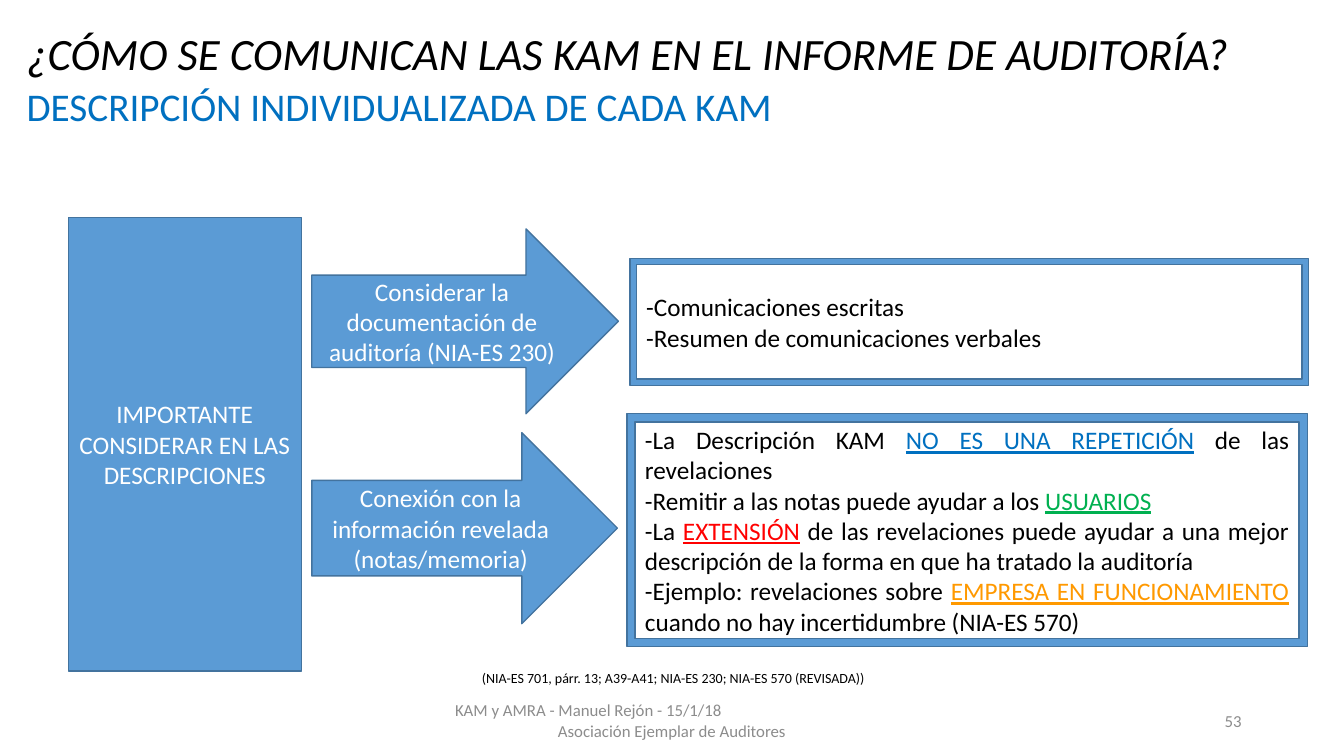
from pptx import Presentation
from pptx.dml.color import RGBColor
from pptx.enum.shapes import MSO_SHAPE
from pptx.enum.text import MSO_ANCHOR, MSO_AUTO_SIZE, PP_ALIGN
from pptx.util import Pt

RECTANGLE, ARROW, FRAME = MSO_SHAPE.RECTANGLE, MSO_SHAPE.RIGHT_ARROW, MSO_SHAPE.FRAME
LEFT, CENTER, RIGHT, JUSTIFY = (
    PP_ALIGN.LEFT, PP_ALIGN.CENTER, PP_ALIGN.RIGHT, PP_ALIGN.JUSTIFY)
TOP, MIDDLE = MSO_ANCHOR.TOP, MSO_ANCHOR.MIDDLE
NO_AUTOFIT = MSO_AUTO_SIZE.NONE

EMU_PER_PX = 9525
FONT = "Calibri"
TITLE_ONLY_LAYOUT = 5
COLORS = {
    "black": "000000",
    "white": "FFFFFF",
    "gray": "8C8C8C",
    "fill": "5B9BD5",
    "outline": "43739E",
    "blue": "0070C0",
    "green": "00B050",
    "red": "FF0000",
    "orange": "FF9900",
}

WRITTEN_RECORDS = [
    [("-Comunicaciones escritas", None)],
    [("-Resumen de comunicaciones verbales", None)],
]
DISCLOSURE_LINKS = [
    [("-La Descripción KAM ", None), ("NO ES UNA REPETICIÓN", "blue"),
     (" de las revelaciones", None)],
    [("-Remitir a las notas puede ayudar a los ", None), ("USUARIOS", "green")],
    [("-La ", None), ("EXTENSIÓN", "red"),
     (" de las revelaciones puede ayudar a una mejor descripción de la forma "
      "en que ha tratado la auditoría", None)],
    [("-Ejemplo: revelaciones sobre ", None),
     ("EMPRESA EN FUNCIONAMIENTO ", "orange"),
     ("cuando no hay incertidumbre (NIA-ES 570)", None)],
]


def px(length):
    return length * EMU_PER_PX


def rgb(name):
    return RGBColor.from_string(COLORS[name])


def format_run(run, size, color):
    run.font.name = FONT
    run.font.size = Pt(size)
    run.font.color.rgb = rgb(color)


def write_lines(frame, lines, size, color, aligns, anchor):
    """Fill a text frame with one paragraph per line, each with its alignment."""
    frame.word_wrap = True
    frame.auto_size = NO_AUTOFIT
    frame.vertical_anchor = anchor
    frame.text = "\n".join(lines)
    for paragraph, align in zip(frame.paragraphs, aligns):
        paragraph.alignment = align
        for run in paragraph.runs:
            format_run(run, size, color)


def place_heading(slide, text, box):
    heading = slide.shapes.title
    heading.left, heading.top, heading.width, heading.height = map(px, box)
    write_lines(heading.text_frame, [text], 32, "black", [LEFT], TOP)
    paragraph = heading.text_frame.paragraphs[0]
    paragraph.line_spacing = 0.9
    paragraph.space_before = Pt(0)
    paragraph.runs[0].font.italic = True


def add_label(slide, lines, box, size, color, aligns, anchor=TOP):
    label = slide.shapes.add_textbox(*map(px, box))
    write_lines(label.text_frame, lines, size, color, aligns, anchor)


def add_block(slide, preset, box):
    block = slide.shapes.add_shape(preset, *map(px, box))
    block.shadow.inherit = False
    block.fill.solid()
    block.fill.fore_color.rgb = rgb("fill")
    block.line.color.rgb = rgb("outline")
    block.line.width = Pt(1)
    return block


def add_topic(slide, preset, text, box):
    topic = add_block(slide, preset, box)
    write_lines(topic.text_frame, [text], 18, "white", [CENTER], MIDDLE)


def add_detail_frame(slide, points, box, thickness):
    """Add a frame whose points are lists of (text, highlight colour or None)."""
    detail = add_block(slide, FRAME, box)
    detail.adjustments[0] = thickness
    content = detail.text_frame
    content.word_wrap = True
    content.vertical_anchor = MIDDLE
    for index, point in enumerate(points):
        paragraph = content.add_paragraph() if index else content.paragraphs[0]
        paragraph.alignment = JUSTIFY
        for text, highlight in point:
            run = paragraph.add_run()
            run.text = text
            format_run(run, 18, highlight or "black")
            run.font.underline = highlight is not None


def main():
    deck = Presentation()
    deck.slide_width, deck.slide_height = px(1280), px(720)
    slide = deck.slides.add_slide(deck.slide_layouts[TITLE_ONLY_LAYOUT])

    place_heading(slide, "¿CÓMO SE COMUNICAN LAS KAM EN EL INFORME DE AUDITORÍA?",
                  (16, 25, 1175, 62))
    add_label(slide, ["DESCRIPCIÓN INDIVIDUALIZADA DE CADA KAM"],
              (16, 74, 1179, 55), 28, "blue", [LEFT])

    add_topic(slide, RECTANGLE, "IMPORTANTE CONSIDERAR EN LAS DESCRIPCIONES",
              (65, 207, 222, 432))
    add_topic(slide, ARROW, "Considerar la documentación de auditoría (NIA-ES 230)",
              (297, 218, 292, 176))
    add_topic(slide, ARROW, "Conexión con la información revelada (notas/memoria)",
              (297, 412, 291, 182))
    add_detail_frame(slide, WRITTEN_RECORDS, (600, 246, 646, 121), 0.05)
    add_detail_frame(slide, DISCLOSURE_LINKS, (597, 394, 648, 222), 0.035)

    add_label(slide, ["(NIA-ES 701, párr. 13; A39-A41; NIA-ES 230; NIA-ES 570 (REVISADA))"],
              (444, 633, 394, 26), 10, "black", [CENTER])
    add_label(slide, ["KAM y AMRA - Manuel Rejón - 15/1/18", "Asociación Ejemplar de Auditores"],
              (424, 667, 432, 38), 12, "gray", [LEFT, CENTER], MIDDLE)
    add_label(slide, ["53"], (904, 667, 288, 38), 12, "gray", [RIGHT], MIDDLE)

    deck.save("out.pptx")


if __name__ == "__main__":
    main()
